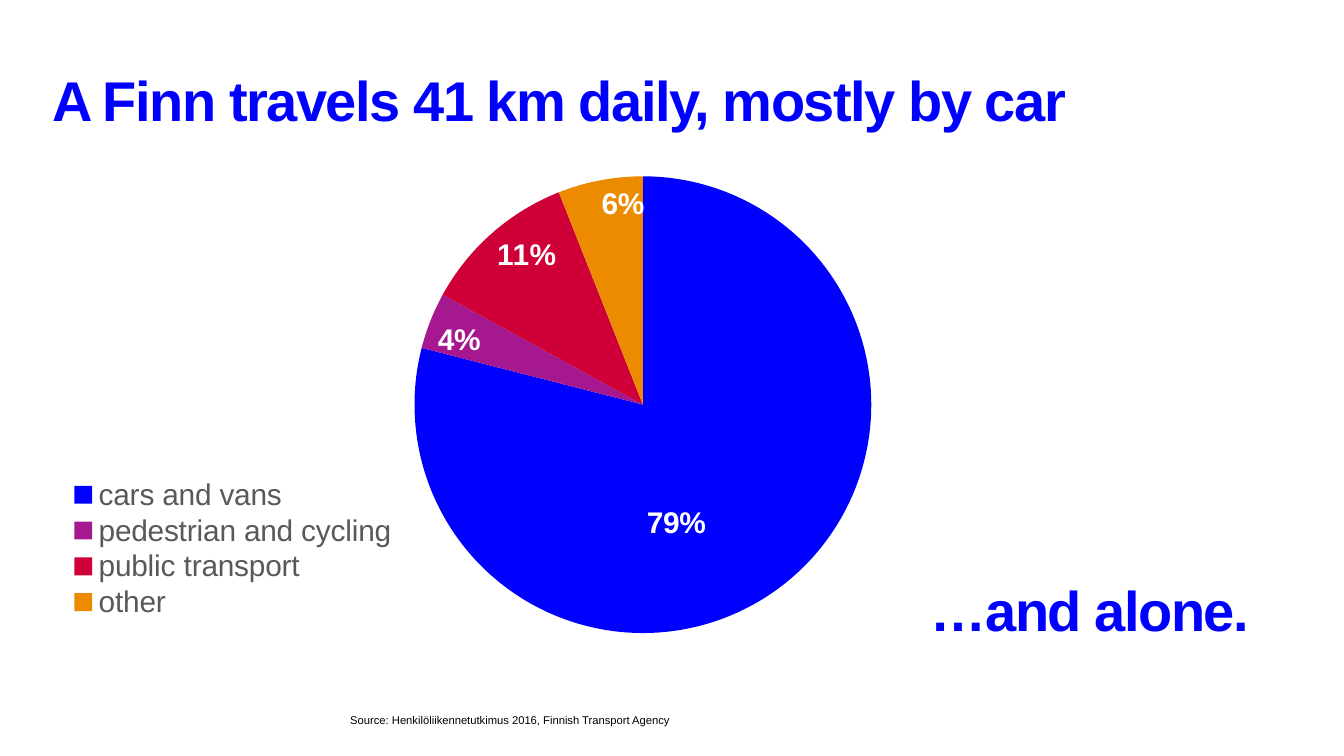
from copy import deepcopy

from pptx import Presentation
from pptx.chart.data import CategoryChartData
from pptx.dml.color import RGBColor
from pptx.enum.chart import XL_CHART_TYPE, XL_LABEL_POSITION, XL_LEGEND_POSITION
from pptx.enum.text import MSO_ANCHOR, MSO_AUTO_SIZE, PP_ALIGN
from pptx.oxml import parse_xml
from pptx.oxml.ns import nsdecls, qn
from pptx.util import Pt

PIE = XL_CHART_TYPE.PIE
INSIDE_END = XL_LABEL_POSITION.INSIDE_END
LEGEND_TOP = XL_LEGEND_POSITION.TOP
MIDDLE, TOP = MSO_ANCHOR.MIDDLE, MSO_ANCHOR.TOP
NO_FIT = MSO_AUTO_SIZE.NONE
LEFT = PP_ALIGN.LEFT

EMU_PER_PX = 914400 / 134.4
FONT = "Arial"
COLORS = {
    "blue": "0000FF",
    "purple": "A51890",
    "red": "CE0037",
    "orange": "ED8B00",
    "white": "FFFFFF",
    "grey": "595959",
    "black": "000000",
}
# Travel mode, share in percent, slice colour
MODES = [
    ("cars and vans", 79, "blue"),
    ("pedestrian and cycling", 4, "purple"),
    ("public transport", 11, "red"),
    ("other", 6, "orange"),
]
HEADLINE = dict(size=30, color="blue", bold=True, spacing=-80,
                line_spacing=0.85, anchor=MIDDLE, inset=0)


def px(value):
    return round(value * EMU_PER_PX)


def rgb(name):
    return RGBColor.from_string(COLORS[name])


def style_font(font, size, color, bold=False):
    font.name = FONT
    font.size = Pt(size)
    font.bold = bold
    font.color.rgb = rgb(color)


def write_text(shape, text, size, color, bold=False, spacing=None,
               line_spacing=None, anchor=TOP, inset=None):
    frame = shape.text_frame
    frame.word_wrap = True
    frame.auto_size = NO_FIT
    frame.vertical_anchor = anchor
    if inset is not None:
        frame.margin_left = frame.margin_right = px(inset)
        frame.margin_top = frame.margin_bottom = px(inset)
    paragraph = frame.paragraphs[0]
    paragraph.alignment = LEFT
    if line_spacing:
        paragraph.line_spacing = line_spacing
    run = paragraph.add_run()
    run.text = text
    style_font(run.font, size, color, bold)
    if spacing:
        run._r.get_or_add_rPr().set("spc", str(spacing))


def add_title(slide, text, left, top, width, height, **text_format):
    title = slide.shapes.title
    title.left, title.top = px(left), px(top)
    title.width, title.height = px(width), px(height)
    write_text(title, text, **text_format)


def add_text(slide, text, left, top, width, height, **text_format):
    box = slide.shapes.add_textbox(px(left), px(top), px(width), px(height))
    write_text(box, text, **text_format)


def set_layout(parent, index, settings):
    """Place a chart part by fractions of the chart's size."""
    for old in parent.findall(qn("c:layout")):
        parent.remove(old)
    items = "".join(f'<c:{tag} val="{val}"/>' for tag, val in settings.items())
    parent.insert(index, parse_xml(
        f'<c:layout {nsdecls("c")}><c:manualLayout>{items}'
        "</c:manualLayout></c:layout>"))


def move_label(labels, point, x, y):
    """Shift one slice's label, keeping the format of the others."""
    element = labels._element
    label = parse_xml(f'<c:dLbl {nsdecls("c")}><c:idx val="{point}"/></c:dLbl>')
    for child in element:
        if child.tag != qn("c:showLeaderLines"):
            label.append(deepcopy(child))
    set_layout(label, 1, {"x": x, "y": y})
    element.insert(0, label)


def add_mode_pie(slide, left, top, width, height):
    data = CategoryChartData()
    data.categories = [mode for mode, _, _ in MODES]
    data.add_series("Series 1", [share for _, share, _ in MODES])
    chart = slide.shapes.add_chart(
        PIE, px(left), px(top), px(width), px(height), data).chart
    chart.has_title = False
    style_font(chart.font, 10, "black")

    # Slices
    plot = chart.plots[0]
    plot.vary_by_categories = True
    series = plot.series[0]
    for index, (_, _, color) in enumerate(MODES):
        slice_format = series.points[index].format
        slice_format.fill.solid()
        slice_format.fill.fore_color.rgb = rgb(color)
        slice_format.line.fill.background()
    edges = {"layoutTarget": "inner", "xMode": "edge", "yMode": "edge"}
    set_layout(chart._chartSpace.chart.plotArea, 0,
               {**edges, "x": 0.3, "y": 0.13, "w": 0.38, "h": 0.81})

    # Percentages
    labels = series.data_labels
    labels.show_value = False
    labels.show_percentage = True
    labels.number_format = "0%"
    labels.number_format_is_linked = False
    labels.position = INSIDE_END
    style_font(labels.font, 16, "white", bold=True)
    move_label(labels, 0, -0.06, -0.07)

    # Legend
    chart.has_legend = True
    legend = chart.legend
    legend.position = LEGEND_TOP
    legend.include_in_layout = False
    style_font(legend.font, 16, "grey")
    set_layout(legend._element, 1,
               {"xMode": "edge", "yMode": "edge",
                "x": 0.01, "y": 0.66, "w": 0.28, "h": 0.26})


def main():
    deck = Presentation()
    deck.slide_width, deck.slide_height = px(1344), px(756)
    slide = deck.slides.add_slide(deck.slide_layouts[5])

    add_title(slide, "A Finn travels 41 km daily, mostly by car",
              52, 50, 1239, 108, **HEADLINE)
    add_mode_pie(slide, 52, 103, 1206, 564)
    add_text(slide, "Source: Henkilöliikennetutkimus 2016, Finnish Transport Agency",
             337, 707, 362, 27, size=6, color="black")
    add_text(slide, "…and alone.", 931, 560, 345, 108, **HEADLINE)

    deck.save("out.pptx")


if __name__ == "__main__":
    main()
